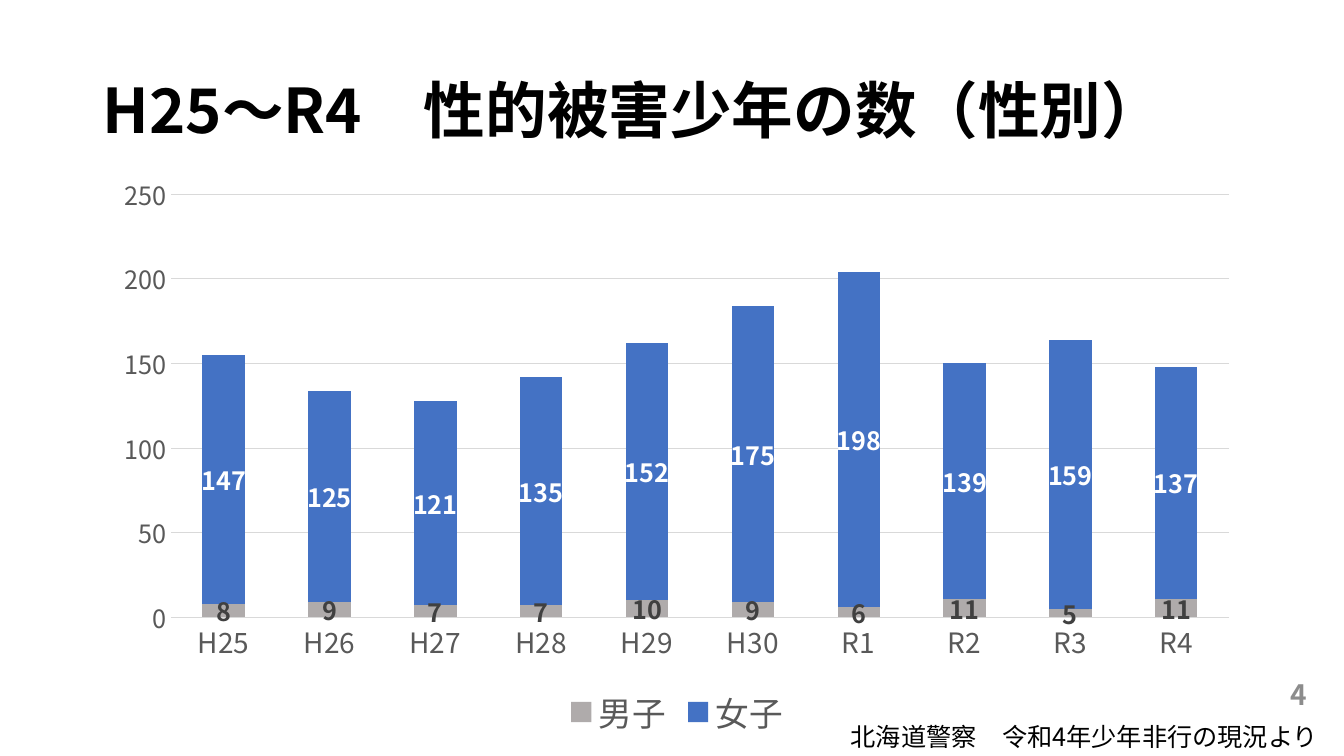
import pptx
import pptx.chart.data
import pptx.dml.color
import pptx.enum.chart
import pptx.enum.text
import pptx.oxml
import pptx.oxml.ns
import pptx.util

Inches, Pt = pptx.util.Inches, pptx.util.Pt
RGBColor = pptx.dml.color.RGBColor
Anchor, Align = pptx.enum.text.MSO_ANCHOR, pptx.enum.text.PP_ALIGN

BLACK = RGBColor(0x00, 0x00, 0x00)
WHITE = RGBColor(0xFF, 0xFF, 0xFF)
DARK = RGBColor(0x40, 0x40, 0x40)
AXIS_TEXT = RGBColor(0x59, 0x59, 0x59)
PAGE_GRAY = RGBColor(0x8C, 0x8C, 0x8C)
GRID = RGBColor(0xD9, 0xD9, 0xD9)
BOYS_GRAY = RGBColor(0xAF, 0xAB, 0xAB)
GIRLS_BLUE = RGBColor(0x44, 0x72, 0xC4)
FONT = "Noto Sans CJK JP"

TITLE = "H25～R4　性的被害少年の数（性別）"
SOURCE_NOTE = "北海道警察　令和4年少年非行の現況より"
PAGE_NUMBER = "4"
YEARS = ["H25", "H26", "H27", "H28", "H29", "H30", "R1", "R2", "R3", "R4"]
# name, values, bar colour, label colour
SERIES = [
    ("男子", [8, 9, 7, 7, 10, 9, 6, 11, 5, 11], BOYS_GRAY, DARK),
    ("女子", [147, 125, 121, 135, 152, 175, 198, 139, 159, 137], GIRLS_BLUE, WHITE),
]


def format_font(font, size, color, bold=False):
    font.name = FONT
    font.size = Pt(size)
    font.bold = bold
    font.color.rgb = color


def use_east_asian_font(element):
    """Give Japanese characters the same typeface as the Latin ones."""
    for latin in list(element.iter(pptx.oxml.ns.qn("a:latin"))):
        latin.addnext(pptx.oxml.parse_xml(
            f'<a:ea {pptx.oxml.ns.nsdecls("a")} typeface="{FONT}"/>'))


def add_text(slide, text, box, size, color=BLACK, bold=False,
             align=Align.LEFT, anchor=Anchor.TOP, line_spacing=1.0):
    shape = slide.shapes.add_textbox(*map(Inches, box))
    frame = shape.text_frame
    frame.word_wrap = True
    frame.vertical_anchor = anchor
    paragraph = frame.paragraphs[0]
    paragraph.alignment = align
    paragraph.line_spacing = line_spacing
    run = paragraph.add_run()
    run.text = text
    format_font(run.font, size, color, bold)


def format_axis(axis, size):
    axis.major_tick_mark = axis.minor_tick_mark = pptx.enum.chart.XL_TICK_MARK.NONE
    format_font(axis.tick_labels.font, size, AXIS_TEXT)


def format_line(line):
    line.color.rgb = GRID
    line.width = Pt(0.75)


def add_victims_chart(slide, box):
    data = pptx.chart.data.CategoryChartData()
    data.categories = YEARS
    for name, values, _, _ in SERIES:
        data.add_series(name, values)
    chart = slide.shapes.add_chart(
        pptx.enum.chart.XL_CHART_TYPE.COLUMN_STACKED, *map(Inches, box), data).chart
    format_font(chart.font, 10, BLACK)
    chart.has_title = False
    chart.has_legend = True
    chart.legend.position = pptx.enum.chart.XL_LEGEND_POSITION.BOTTOM
    chart.legend.include_in_layout = False
    format_font(chart.legend.font, 24, AXIS_TEXT)

    format_axis(chart.category_axis, 20)
    format_line(chart.category_axis.format.line)
    value_axis = chart.value_axis
    format_axis(value_axis, 18)
    value_axis.format.line.fill.background()
    value_axis.minimum_scale, value_axis.maximum_scale = 0, 250
    value_axis.major_unit = 50
    format_line(value_axis.major_gridlines.format.line)

    plot = chart.plots[0]
    plot.gap_width, plot.overlap = 150, 100
    plot.vary_by_categories = False
    for series, (_, _, bar_color, label_color) in zip(plot.series, SERIES):
        series.format.fill.solid()
        series.format.fill.fore_color.rgb = bar_color
        labels = series.data_labels
        labels.show_value = True
        labels.position = pptx.enum.chart.XL_LABEL_POSITION.CENTER
        format_font(labels.font, 18, label_color, bold=True)
    use_east_asian_font(chart.element)


def main():
    presentation = pptx.Presentation()
    presentation.slide_width = Inches(13.33)
    presentation.slide_height = Inches(7.5)
    slide = presentation.slides.add_slide(presentation.slide_layouts[6])

    add_text(slide, TITLE, (0.92, 0.4, 11.5, 1.45), 44, bold=True,
             anchor=Anchor.MIDDLE, line_spacing=0.9)
    add_victims_chart(slide, (1.01, 1.63, 11.41, 5.74))
    add_text(slide, PAGE_NUMBER, (10.06, 6.69, 3, 0.4), 20, color=PAGE_GRAY,
             bold=True, align=Align.RIGHT, anchor=Anchor.MIDDLE)
    add_text(slide, SOURCE_NOTE, (8.34, 7.11, 5.2, 0.4), 18)
    use_east_asian_font(slide.element)
    presentation.save("out.pptx")


if __name__ == "__main__":
    main()
